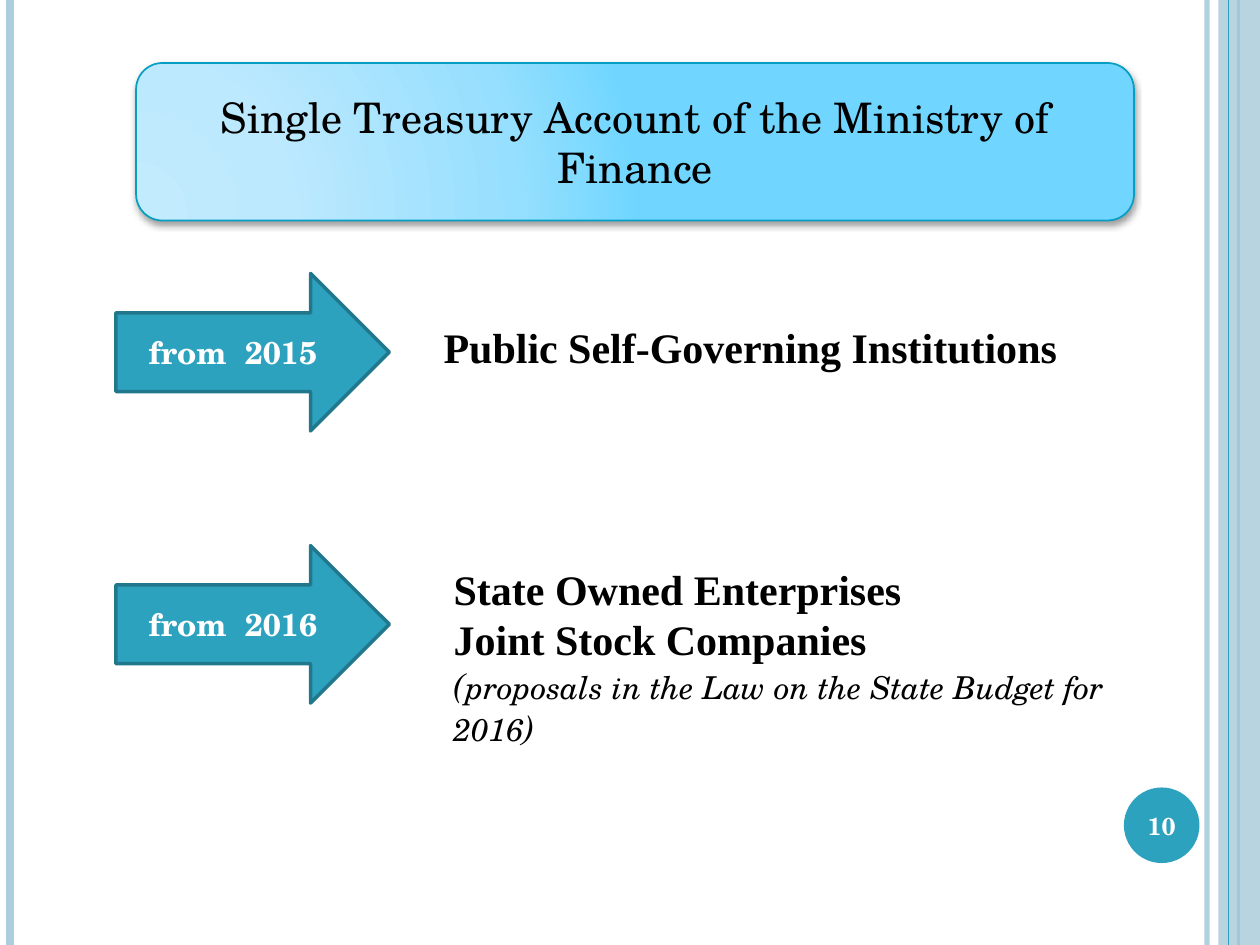
from lxml import etree
from pptx import Presentation
from pptx.dml.color import RGBColor
from pptx.enum.shapes import MSO_CONNECTOR, MSO_SHAPE
from pptx.enum.text import MSO_ANCHOR, MSO_AUTO_SIZE, PP_ALIGN
from pptx.oxml import parse_xml
from pptx.oxml.ns import nsdecls, qn
from pptx.util import Inches, Pt

STRAIGHT = MSO_CONNECTOR.STRAIGHT
RECT, OVAL = MSO_SHAPE.RECTANGLE, MSO_SHAPE.OVAL
PANEL, ARROW = MSO_SHAPE.ROUNDED_RECTANGLE, MSO_SHAPE.RIGHT_ARROW
CENTER, LEFT = PP_ALIGN.CENTER, PP_ALIGN.LEFT
MIDDLE, TOP = MSO_ANCHOR.MIDDLE, MSO_ANCHOR.TOP
NO_FIT, GROW = MSO_AUTO_SIZE.NONE, MSO_AUTO_SIZE.SHAPE_TO_FIT_TEXT

SCHOLA, TIMES = "TeX Gyre Schola", "Times New Roman"
THEME = {
    "teal": "2DA2BF", "teal_dark": "21788D", "pale": "ADCEDC",
    "panel_line": "079EC3", "ink": "000000", "white": "FFFFFF",
    "panel_stops": [(0, "C2EBFD"), (30, "BCE9FE"), (75, "96DFFE"), (100, "70D6FF")],
    "title": {"name": SCHOLA, "size": Pt(24), "bold": False, "color": "ink"},
    "label": {"name": SCHOLA, "size": Pt(18), "bold": True, "color": "white"},
    "number": {"name": SCHOLA, "size": Pt(14), "bold": True, "color": "white"},
    "entry": {"name": TIMES, "size": Pt(24), "bold": True, "color": "ink"},
    "bracket": {"name": SCHOLA, "size": Pt(20), "bold": False, "italic": True, "color": "ink"},
    "note": {"name": SCHOLA, "size": Pt(18), "bold": False, "italic": True, "color": "ink"},
}

WIDTH, HEIGHT = 10, 7.5
TITLE = "Single Treasury Account of the Ministry of Finance"
TITLE_BOX = (1.08, 0.5, 7.92, 1.25)
PAGE_NUMBER = "10"
STAGES = [
    {"label": "from  2015", "box": (3.42, 2.5, 6.08, 0.5),
     "text": [[("Public Self-Governing Institutions", "entry")]]},
    {"label": "from  2016", "box": (3.5, 4.42, 5.92, 1.58),
     "text": [[("State Owned Enterprises\nJoint Stock Companies", "entry")],
              [("(", "bracket"),
               ("proposals in the Law on the State Budget for 2016", "note"),
               (")", "bracket")]]},
]
ARROW_LEFT, ARROW_TOP, ARROW_STEP = 0.92, 2.17, 2.16
ARROW_SIZE = (2.17, 1.25)
RULES_BEHIND = [(9.58, "pale", 3, 93), (0.08, "pale", 4.5, 100), (9.83, "teal", 1.5, 100)]
RULES_FRONT = [(9.75, "teal", 0.75, 100)]


def rgb(name):
    return RGBColor.from_string(THEME[name])


def set_alpha(element, percent):
    if percent < 100:
        color = next(element.iter(qn("a:srgbClr")))
        etree.SubElement(color, qn("a:alpha")).set("val", str(percent * 1000))


def add_rules(slide, rules):
    for x, color, weight, opacity in rules:
        rule = slide.shapes.add_connector(STRAIGHT, Inches(x), 0, Inches(x), Inches(HEIGHT))
        rule.line.color.rgb = rgb(color)
        rule.line.width = Pt(weight)
        set_alpha(rule.element.spPr, opacity)
        etree.SubElement(rule.element.spPr, qn("a:effectLst"))


def add_block(slide, kind, box, fill, line=None, weight=0):
    block = slide.shapes.add_shape(kind, *map(Inches, box))
    block.shadow.inherit = False
    block.fill.solid()
    block.fill.fore_color.rgb = rgb(fill)
    if line:
        block.line.color.rgb = rgb(line)
        block.line.width = Pt(weight)
    else:
        block.line.fill.background()
    return block


def place(holder, box):
    for side, length in zip(("left", "top", "width", "height"), box):
        setattr(holder, side, Inches(length))


def write(holder, paragraphs, align, anchor, fit=NO_FIT):
    frame = holder.text_frame
    for key, value in {"word_wrap": True, "auto_size": fit, "vertical_anchor": anchor}.items():
        setattr(frame, key, value)
    for index, runs in enumerate(paragraphs):
        paragraph = frame.add_paragraph() if index else frame.paragraphs[0]
        properties = paragraph._p.get_or_add_pPr()
        properties.set("marL", "0")
        properties.set("indent", "0")
        etree.SubElement(properties, qn("a:buNone"))
        paragraph.alignment = align
        paragraph.space_before = Pt(0)
        for text, style in runs:
            for number, part in enumerate(text.split("\n")):
                if number:
                    paragraph.add_line_break()
                run = paragraph.add_run()
                run.text = part
                for key, value in THEME[style].items():
                    if key == "color":
                        run.font.color.rgb = rgb(value)
                    else:
                        setattr(run.font, key, value)


def add_title(slide):
    panel = add_block(slide, PANEL, TITLE_BOX, "white", "panel_line", 1)
    stops = "".join(f'<a:gs pos="{pos * 1000}"><a:srgbClr val="{color}"/></a:gs>'
                    for pos, color in THEME["panel_stops"])
    gradient = parse_xml(
        f'<a:gradFill {nsdecls("a")} rotWithShape="1"><a:gsLst>{stops}</a:gsLst>'
        '<a:path path="circle"><a:fillToRect l="5000" t="100000" r="120000" b="10000"/>'
        '</a:path></a:gradFill>')
    properties = panel.element.spPr
    properties.replace(properties.find(qn("a:solidFill")), gradient)
    properties.find(qn("a:effectLst")).append(parse_xml(
        f'<a:outerShdw {nsdecls("a")} blurRad="{Pt(4)}" dist="{Pt(2)}" dir="5400000" '
        'rotWithShape="0"><a:srgbClr val="000000"><a:alpha val="40000"/></a:srgbClr>'
        '</a:outerShdw>'))
    title = slide.shapes.title
    place(title, TITLE_BOX)
    write(title, [[(TITLE, "title")]], CENTER, MIDDLE)
    panel.element.addnext(title.element)


def main():
    deck = Presentation()
    deck.slide_width, deck.slide_height = Inches(WIDTH), Inches(HEIGHT)
    slide = deck.slides.add_slide(deck.slide_layouts[3])

    add_rules(slide, RULES_BEHIND)
    band = add_block(slide, RECT, (9.67, 0, 0.33, HEIGHT), "pale")
    set_alpha(band.element.spPr, 87)
    add_rules(slide, RULES_FRONT)

    badge = add_block(slide, OVAL, (8.92, 6.25, 0.6, 0.6), "teal")
    badge.text_frame.margin_left = badge.text_frame.margin_right = 0
    write(badge, [[(PAGE_NUMBER, "number")]], CENTER, MIDDLE)

    add_title(slide)
    for row, stage in enumerate(STAGES):
        arrow_box = (ARROW_LEFT, ARROW_TOP + row * ARROW_STEP, *ARROW_SIZE)
        arrow = add_block(slide, ARROW, arrow_box, "teal", "teal_dark", 2)
        write(arrow, [[(stage["label"], "label")]], CENTER, MIDDLE)
        body = slide.placeholders[row + 1]
        place(body, stage["box"])
        write(body, stage["text"], LEFT, TOP, GROW)

    deck.save("out.pptx")


if __name__ == "__main__":
    main()
